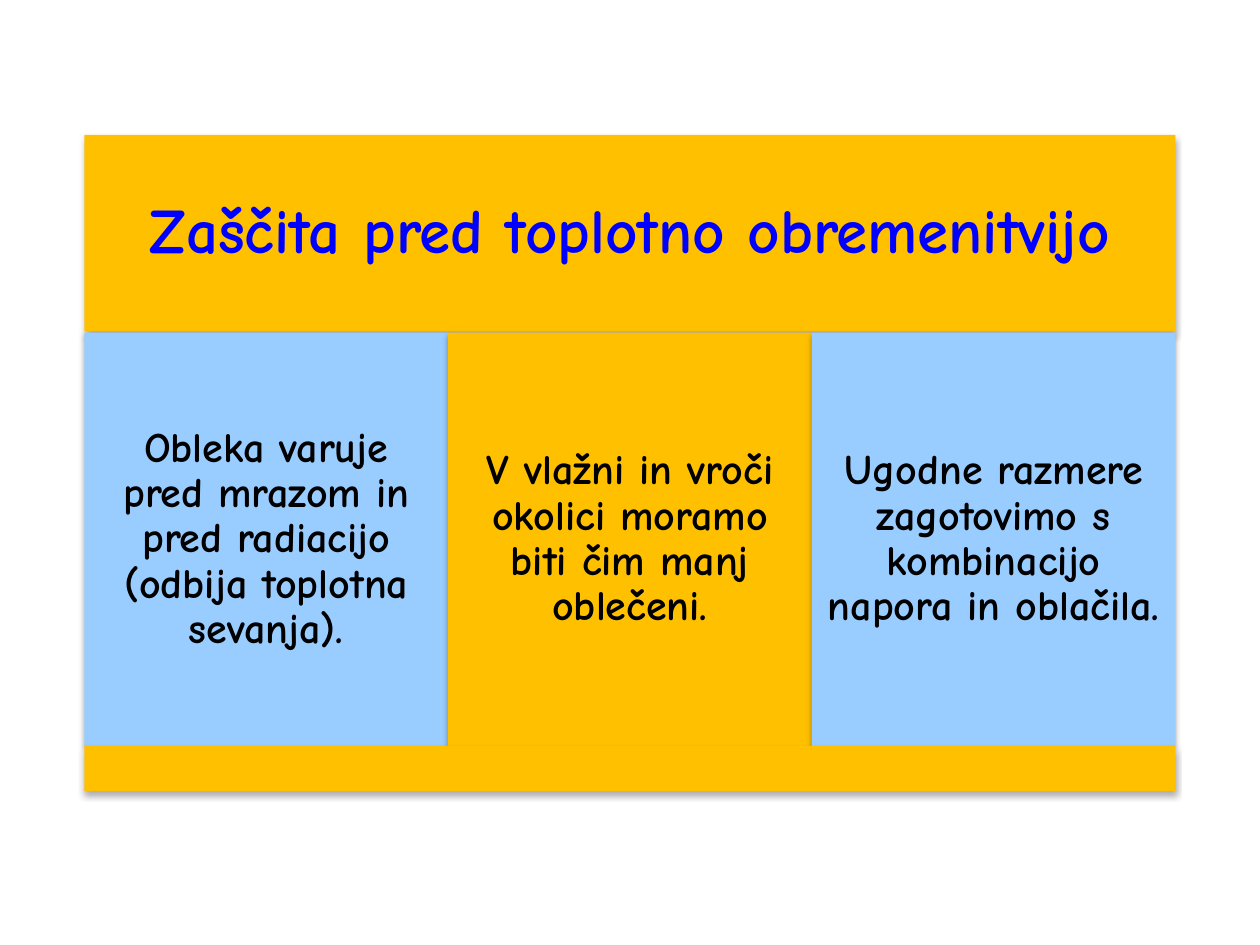
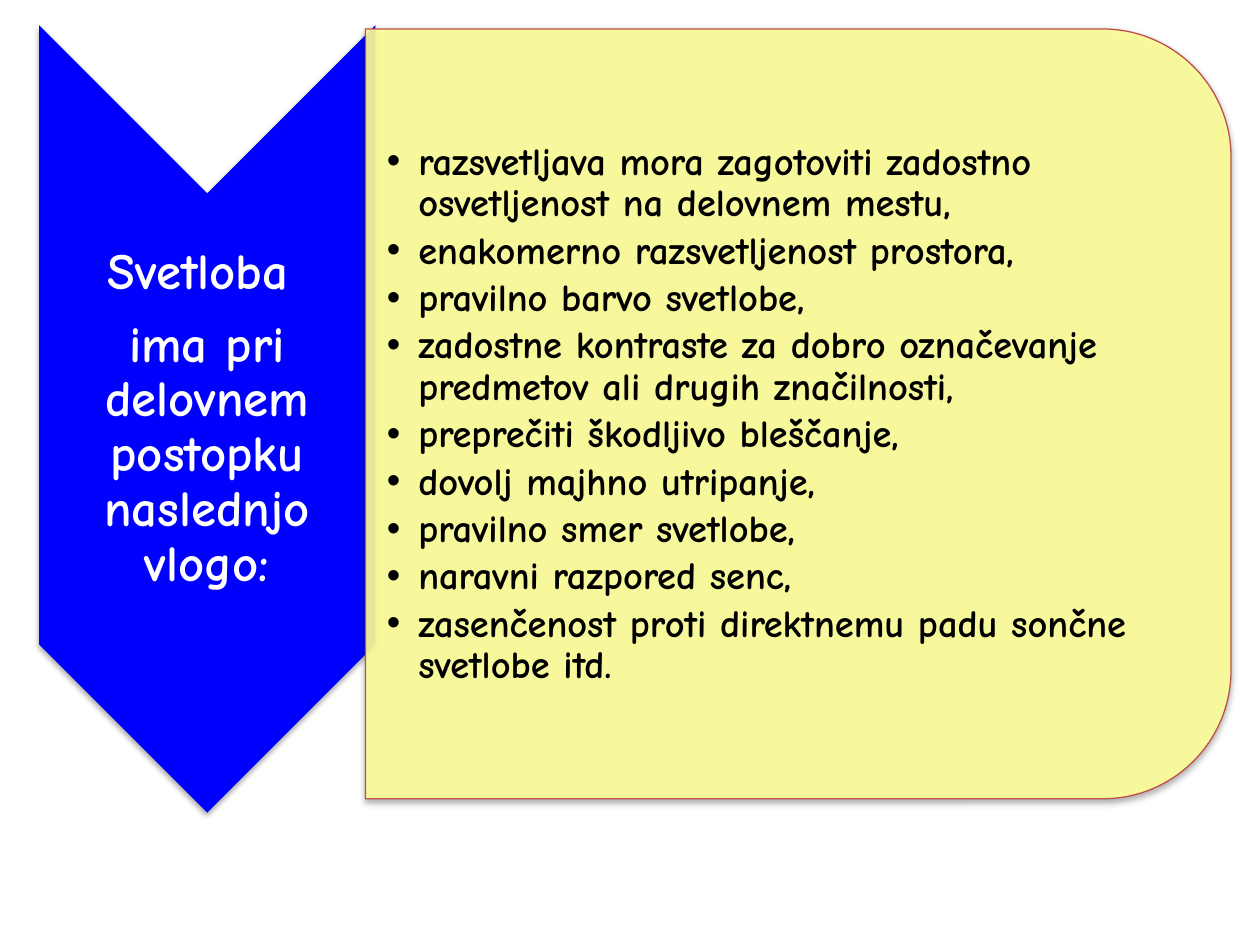
from dataclasses import dataclass
from lxml.etree import SubElement as Sub
from pptx import Presentation
from pptx.dml.color import RGBColor as Rgb
from pptx.enum.shapes import MSO_SHAPE as Kind
from pptx.enum.text import MSO_ANCHOR as Anchor, PP_ALIGN as Align
from pptx.oxml.ns import qn
from pptx.util import Inches, Pt

HEAD = "Zaščita pred toplotno obremenitvijo"
CARDS = [
    "Obleka varuje pred mrazom in pred radiacijo (odbija toplotna sevanja).",
    "V vlažni in vroči okolici moramo biti čim manj oblečeni.",
    "Ugodne razmere zagotovimo s kombinacijo napora in oblačila.",
]
TOPIC = ["Svetloba ", "ima pri delovnem postopku naslednjo vlogo:"]
ROLES = [
    "razsvetljava mora zagotoviti zadostno osvetljenost na delovnem mestu,",
    "enakomerno razsvetljenost prostora,",
    "pravilno barvo svetlobe,",
    "zadostne kontraste za dobro označevanje predmetov ali drugih značilnosti,",
    "preprečiti škodljivo bleščanje,",
    "dovolj majhno utripanje,",
    "pravilno smer svetlobe,",
    "naravni razpored senc,",
    "zasenčenost proti direktnemu padu sončne svetlobe itd.",
]


@dataclass(frozen=True)
class Theme:
    font: str = "Comic Neue"
    gold: str = "FFC000"
    sky: str = "99CCFF"
    blue: str = "0000FF"
    cream: str = "FFFF99"
    red: str = "C0504D"
    black: str = "000000"
    white: str = "FFFFFF"
    head: int = 36
    topic: int = 29
    card: int = 24
    role: int = 22
    soft: tuple = (35, 3.15, 1.8)
    deep: tuple = (32, 3.5, 2.2)


T = Theme()


def box(at):
    return [Inches(v) for v in at]


def shade(shape, look):
    alpha, blur, dist = look
    shape.shadow.inherit = False
    fx = shape.element.spPr.find(qn("a:effectLst"))
    out = Sub(fx, qn("a:outerShdw"), blurRad=str(Pt(blur)), dist=str(Pt(dist)),
              dir="5400000", rotWithShape="0")
    tint = Sub(out, qn("a:srgbClr"), val=T.black)
    Sub(tint, qn("a:alpha"), val=str(alpha * 1000))


def draw(slide, at, fill, kind=Kind.RECTANGLE, look=T.soft):
    shape = slide.shapes.add_shape(kind, *box(at))
    shape.fill.solid()
    shape.fill.fore_color.rgb = Rgb.from_string(fill)
    shape.line.fill.background()
    shade(shape, look)
    return shape


def turn(slide, at, fill, kind):
    left, top, wide, high = at
    spot = (left + (wide - high) / 2, top + (high - wide) / 2, high, wide)
    shape = draw(slide, spot, fill, kind)
    shape.rotation = 90
    return shape


def write(shape, lines, size, color, pad, gap=0.35, align=Align.CENTER):
    frame = shape.text_frame
    frame.word_wrap = True
    frame.vertical_anchor = Anchor.MIDDLE
    (frame.margin_left, frame.margin_top,
     frame.margin_right, frame.margin_bottom) = box(pad)
    frame.text = "\n".join(lines)
    for para in frame.paragraphs:
        para.alignment = align
        para.line_spacing = 0.9
        para.space_after = Pt(size * gap)
        for run in para.runs:
            font = run.font
            font.name, font.size, font.bold = T.font, Pt(size), True
            font.color.rgb = Rgb.from_string(color)


def dot(shape):
    for para in shape.text_frame.paragraphs:
        props = para._p.get_or_add_pPr()
        props.set("marL", str(Inches(0.25)))
        props.set("indent", str(-Inches(0.25)))
        Sub(props, qn("a:buFont"), typeface="Arial")
        Sub(props, qn("a:buChar"), char="•")


def heat(slide):
    left, wide, top, high = 0.67, 8.66, 2.64, 3.28
    band = draw(slide, (left, 1.07, wide, 1.56), T.gold, look=T.deep)
    write(band, [HEAD], T.head, T.blue, [0.15] * 4)
    step = wide / len(CARDS)
    for i, words in enumerate(CARDS):
        fill = T.gold if i % 2 else T.sky
        card = draw(slide, (left + i * step, top, step, high), fill)
        write(card, [words], T.card, T.black, [0.1] * 4)
    draw(slide, (left, top + high, wide, 0.36), T.gold, look=T.deep)


def light(slide):
    turn(slide, (0.31, 0.2, 2.67, 6.25), T.blue, Kind.CHEVRON)
    label = slide.shapes.add_textbox(*box((0.31, 1.54, 2.67, 3.57)))
    write(label, TOPIC, T.topic, T.white, [0.02] * 4)

    panel = turn(slide, (2.9, 0.23, 6.87, 6.11), T.cream,
                 Kind.ROUND_2_SAME_RECTANGLE)
    panel.rotation = 90
    panel.line.color.rgb = Rgb.from_string(T.red)
    panel.line.width = Pt(0.75)
    tint = panel.element.spPr.find(qn("a:solidFill")).find(qn("a:srgbClr"))
    Sub(tint, qn("a:alpha"), val="90000")
    notes = slide.shapes.add_textbox(*box((2.9, 0.53, 6.57, 5.52)))
    write(notes, ROLES, T.role, T.black, (0.17, 0.02, 0.02, 0.02),
          0.15, Align.LEFT)
    dot(notes)


def main():
    deck = Presentation()
    deck.slide_width, deck.slide_height = Inches(10), Inches(7.5)
    for fill in (heat, light):
        fill(deck.slides.add_slide(deck.slide_layouts[6]))
    deck.save("out.pptx")


if __name__ == "__main__":
    main()
